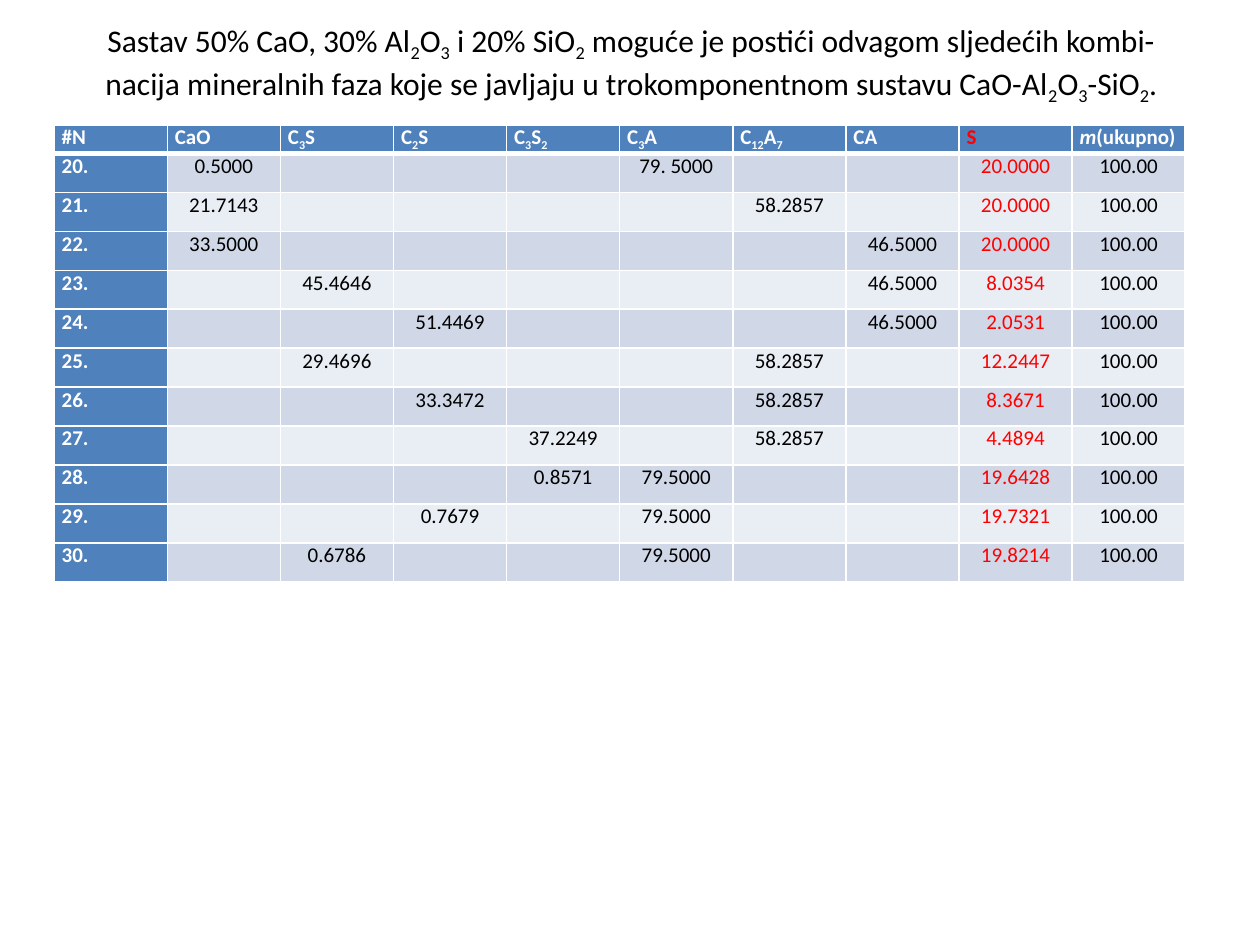
from lxml.etree import SubElement
from pptx import Presentation
from pptx.dml.color import RGBColor
from pptx.enum.text import MSO_ANCHOR, PP_ALIGN
from pptx.oxml.ns import qn
from pptx.util import Inches, Pt

COLORS = {
    "text": "000000", "white": "FFFFFF", "silica": "FF0000",
    "header": "4F81BD", "odd": "D0D8E8", "even": "E9EDF4",
}
SUBSCRIPT = {"baseline": "-25000"}
ITALIC = {"i": "1"}

# Text between two ~ signs is subscript, or italic in the last heading
TITLE = ("Sastav 50% CaO, 30% Al~2~O~3~ i 20% SiO~2~ moguće je postići odvagom "
         "sljedećih kombi-nacija mineralnih faza koje se javljaju u "
         "trokomponentnom sustavu CaO-Al~2~O~3~-SiO~2~.")
HEADINGS = ["#N", "CaO", "C~3~S", "C~2~S", "C~3~S~2~", "C~3~A", "C~12~A~7~",
            "CA", "S", "~m~(ukupno)"]
FIRST_NUMBER = 20
TOTAL = "100.00"
# Each mixture: masses of the mineral phases by heading, then mass of S
MIXTURES = [
    ({"CaO": "0.5000", "C~3~A": "79. 5000"}, "20.0000"),
    ({"CaO": "21.7143", "C~12~A~7~": "58.2857"}, "20.0000"),
    ({"CaO": "33.5000", "CA": "46.5000"}, "20.0000"),
    ({"C~3~S": "45.4646", "CA": "46.5000"}, "8.0354"),
    ({"C~2~S": "51.4469", "CA": "46.5000"}, "2.0531"),
    ({"C~3~S": "29.4696", "C~12~A~7~": "58.2857"}, "12.2447"),
    ({"C~2~S": "33.3472", "C~12~A~7~": "58.2857"}, "8.3671"),
    ({"C~3~S~2~": "37.2249", "C~12~A~7~": "58.2857"}, "4.4894"),
    ({"C~3~S~2~": "0.8571", "C~3~A": "79.5000"}, "19.6428"),
    ({"C~2~S": "0.7679", "C~3~A": "79.5000"}, "19.7321"),
    ({"C~3~S": "0.6786", "C~3~A": "79.5000"}, "19.8214"),
]
LEFT, TOP, WIDTH, HEIGHT = 0.43, 0.99, 8.98, 3.61
HEADER_HEIGHT = 0.21


def write(tf, text, size=12, color="text", bold=False, align=PP_ALIGN.LEFT, mark=SUBSCRIPT):
    """Fill the first paragraph, giving the parts between ~ signs the mark attributes."""
    p = tf.paragraphs[0]
    p.alignment = align
    for i, part in enumerate(text.split("~")):
        if not part:
            continue
        r = p.add_run()
        r.text = part
        r.font.name = "Calibri"
        r.font.size = Pt(size)
        r.font.bold = bold
        r.font.color.rgb = RGBColor.from_string(COLORS[color])
        if i % 2:
            for name, value in mark.items():
                r._r.get_or_add_rPr().set(name, value)


def style_cell(cell, fill, top=1, bottom=1):
    """Set margins, white borders with widths in points, and fill."""
    cell.margin_left = cell.margin_right = Inches(0.06)
    cell.margin_top = cell.margin_bottom = 0
    tcPr = cell._tc.get_or_add_tcPr()
    for side, width in (("L", 1), ("R", 1), ("T", top), ("B", bottom)):
        ln = SubElement(tcPr, qn(f"a:ln{side}"), w=str(Pt(width)))
        solid = SubElement(ln, qn("a:solidFill"))
        SubElement(solid, qn("a:srgbClr"), val=COLORS["white"])
    cell.fill.solid()
    cell.fill.fore_color.rgb = RGBColor.from_string(COLORS[fill])


def add_title(s):
    tf = s.shapes.add_textbox(Inches(0.51), Inches(0.21), Inches(9), Inches(0.9)).text_frame
    tf.word_wrap = True
    tf.vertical_anchor = MSO_ANCHOR.MIDDLE
    tf.margin_top, tf.margin_bottom = 0, Inches(0.31)
    write(tf, TITLE, size=18, align=PP_ALIGN.CENTER)


def add_mixture_table(s):
    rows = [HEADINGS]
    for number, (phases, silica) in enumerate(MIXTURES, FIRST_NUMBER):
        masses = [phases.get(h, "") for h in HEADINGS[1:-2]]
        rows.append([f"{number}.", *masses, silica, TOTAL])

    table = s.shapes.add_table(len(rows), len(HEADINGS), Inches(LEFT), Inches(TOP),
                               Inches(WIDTH), Inches(HEIGHT)).table
    for column in table.columns:
        column.width = Inches(WIDTH / len(HEADINGS))
    for i, row in enumerate(table.rows):
        row.height = Inches((HEIGHT - HEADER_HEIGHT) / len(MIXTURES) if i else HEADER_HEIGHT)

    for i, row in enumerate(rows):
        for j, (heading, text) in enumerate(zip(HEADINGS, row)):
            cell = table.cell(i, j)
            is_head = i == 0 or j == 0
            fill = "header" if is_head else "odd" if i % 2 else "even"
            style_cell(cell, fill, top=3 if i == 1 else 1, bottom=3 if i == 0 else 1)
            color = "silica" if heading == "S" else "white" if is_head else "text"
            write(cell.text_frame, text, color=color, bold=is_head,
                  align=PP_ALIGN.LEFT if is_head else PP_ALIGN.CENTER,
                  mark=ITALIC if heading == HEADINGS[-1] else SUBSCRIPT)


def main():
    prs = Presentation()
    prs.slide_width, prs.slide_height = Inches(10), Inches(7.5)
    s = prs.slides.add_slide(prs.slide_layouts[6])
    add_title(s)
    add_mixture_table(s)
    prs.save("out.pptx")


if __name__ == "__main__":
    main()
